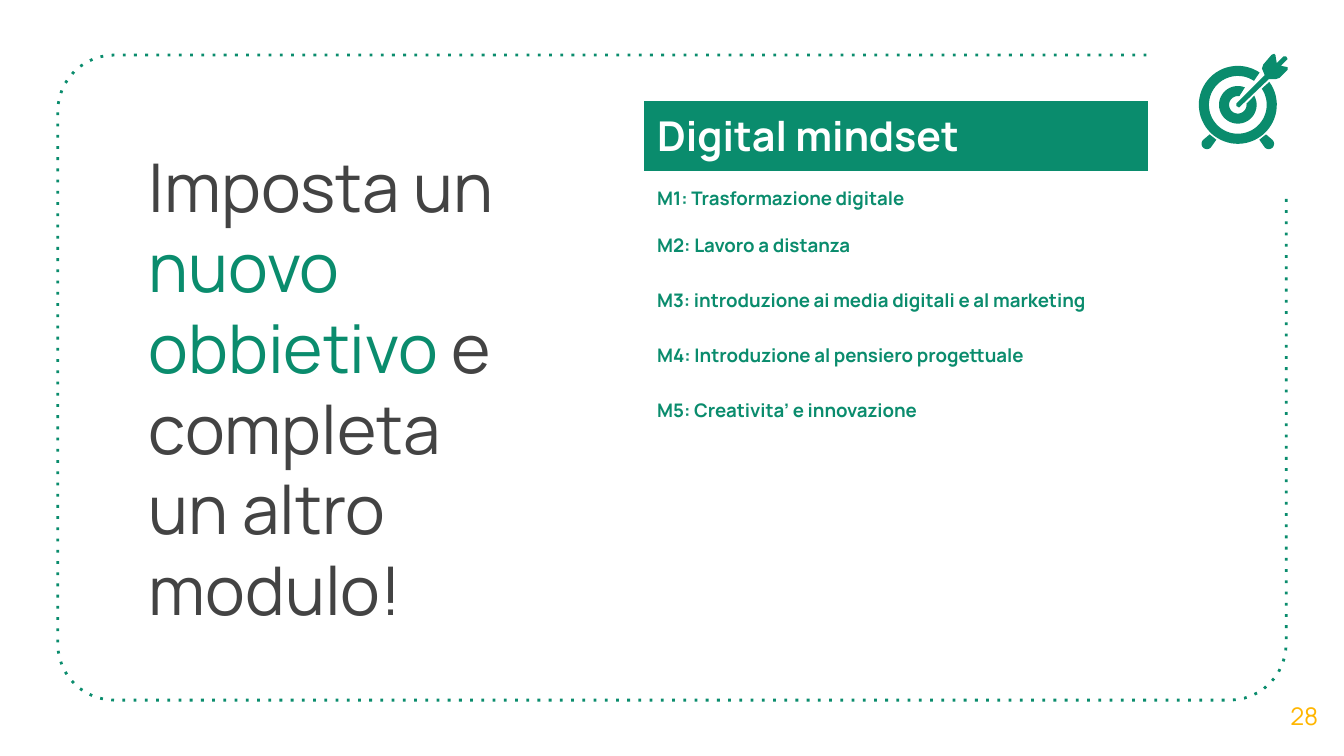
import math

import pptx
import pptx.dml.color
import pptx.enum.text
import pptx.oxml
import pptx.oxml.ns
import pptx.util

Inches = pptx.util.Inches
FONT = "Manrope"
PLAIN_TABLE = "{2D5ABB26-0587-4C30-8999-92F81FD0307C}"
COLORS = {"green": "0A8C6D", "grey": "434343", "yellow": "FFB600", "white": "FFFFFF"}
MODULES = [
    "M1: Trasformazione digitale",
    "M2: Lavoro a distanza",
    "M3: introduzione ai media digitali e al marketing",
    "M4: Introduzione al pensiero progettuale",
    "M5: Creativita’ e innovazione",
]


def rgb(name):
    return pptx.dml.color.RGBColor.from_string(COLORS[name])


def add_run(p, text, size, color, bold=False):
    r = p.add_run()
    r.text = text
    values = {"name": FONT, "size": pptx.util.Pt(size), "bold": bold}
    for key, value in values.items():
        setattr(r.font, key, value)
    r.font.color.rgb = rgb(color)


def add_textbox(slide, x, y, w, h, anchor):
    tf = slide.shapes.add_textbox(Inches(x), Inches(y), Inches(w), Inches(h)).text_frame
    values = {"word_wrap": True, "vertical_anchor": anchor}
    for side in ("left", "top", "right", "bottom"):
        values["margin_" + side] = Inches(0.1)
    for key, value in values.items():
        setattr(tf, key, value)
    return tf


def arc(cx, cy, radius, start, end, steps=12):
    """Points along an arc; degrees run clockwise from the right."""
    angles = [math.radians(start + (end - start) * i / steps) for i in range(steps + 1)]
    return [(cx + radius * math.cos(a), cy + radius * math.sin(a)) for a in angles]


def add_outline(slide, points, x, y, close=True):
    """Freeform through points given in inches from (x, y)."""
    pts = [(Inches(x + px), Inches(y + py)) for px, py in points]
    fb = slide.shapes.build_freeform(*pts[0])
    fb.add_line_segments(pts[1:], close=close)
    sp = fb.convert_to_shape()
    sp.shadow.inherit = False
    return sp


def add_frame(slide, x, y, w, h):
    """Dotted rounded frame, open at the top right corner."""
    rad = 0.42
    points = [(8.1, 0)]
    points += arc(rad, rad, rad, 270, 180)
    points += arc(rad, h - rad, rad, 180, 90)
    points += arc(w - rad, h - rad, rad, 90, 0)
    points.append((w, 1.05))
    sp = add_outline(slide, points, x, y, close=False)
    sp.fill.background()
    sp.line.color.rgb = rgb("green")
    sp.line.width = pptx.util.Pt(1.5)
    ns = pptx.oxml.ns.nsdecls("a")
    dash = pptx.oxml.parse_xml(f'<a:prstDash {ns} val="dot"/>')
    sp.line._get_or_add_ln().append(dash)


def add_target_icon(slide, x, y):
    """Target on two feet, hit by an arrow."""
    cx, cy = 0.29, 0.38
    outer = arc(cx, cy, 0.29, -36, 304, 60) + arc(cx, cy, 0.215, 304, -34, 60)
    inner = arc(cx, cy, 0.14, -29, 292, 40) + arc(cx, cy, 0.065, 280, -8, 40)
    left_foot = [(0.08, 0.6), (0.13, 0.64)] + arc(0.06, 0.67, 0.04, 45, 225)
    right_foot = [(2 * cx - px, py) for px, py in left_foot]
    arrow = [
        (0.56, 0), (0.54, 0.01), (0.48, 0.08), (0.47, 0.11), (0.49, 0.16),
        (0.28, 0.37), (0.28, 0.39), (0.3, 0.4), (0.31, 0.39),
        (0.52, 0.19), (0.57, 0.19), (0.6, 0.18), (0.66, 0.12), (0.66, 0.1),
        (0.61, 0.09), (0.66, 0.04), (0.65, 0.02), (0.63, 0.02),
        (0.58, 0.07), (0.57, 0.01),
    ]
    for points in (outer, inner, left_foot, right_foot, arrow):
        sp = add_outline(slide, points, x, y)
        sp.fill.solid()
        sp.fill.fore_color.rgb = rgb("green")
        sp.line.fill.background()


def add_title(slide, x, y, w, h):
    tf = add_textbox(slide, x, y, w, h, pptx.enum.text.MSO_ANCHOR.TOP)
    p = tf.paragraphs[0]
    add_run(p, "Imposta un ", 36, "grey")
    add_run(p, "nuovo obbietivo ", 36, "green")
    add_run(p, "e completa un altro modulo!", 36, "grey")


def add_module_table(slide, x, y, w, header_h, row_h):
    rows = ["Digital mindset"] + MODULES
    height = header_h + row_h * len(MODULES)
    table = slide.shapes.add_table(
        len(rows), 1, Inches(x), Inches(y), Inches(w), Inches(height)
    ).table
    table.first_row = table.horz_banding = False
    table._tbl.tblPr.find(pptx.oxml.ns.qn("a:tableStyleId")).text = PLAIN_TABLE
    anchors = pptx.enum.text.MSO_ANCHOR
    for i, text in enumerate(rows):
        header = i == 0
        table.rows[i].height = Inches(header_h if header else row_h)
        cell = table.cell(i, 0)
        cell.vertical_anchor = anchors.MIDDLE if i < 2 else anchors.TOP
        if header:
            cell.fill.solid()
            cell.fill.fore_color.rgb = rgb("green")
        else:
            cell.fill.background()
        p = cell.text_frame.paragraphs[0]
        add_run(p, text, 22 if header else 10, "white" if header else "green", True)


def add_slide_number(slide, x, y, w, h):
    tf = add_textbox(slide, x, y, w, h, pptx.enum.text.MSO_ANCHOR.MIDDLE)
    p = tf.paragraphs[0]
    p.alignment = pptx.enum.text.PP_ALIGN.CENTER
    add_run(p, "28", 13, "yellow")


def main():
    prs = pptx.Presentation()
    prs.slide_width = Inches(10)
    prs.slide_height = prs.slide_width * 9 // 16
    slide = prs.slides.add_slide(prs.slide_layouts[6])
    add_frame(slide, 0.43, 0.41, 9.14, 4.8)
    add_title(slide, 1.01, 0.98, 2.97, 0.94)
    add_slide_number(slide, 9.41, 5.03, 0.59, 0.6)
    add_target_icon(slide, 8.92, 0.4)
    add_module_table(slide, 4.79, 0.75, 3.75, 0.52, 0.41)
    prs.save("out.pptx")


if __name__ == "__main__":
    main()
